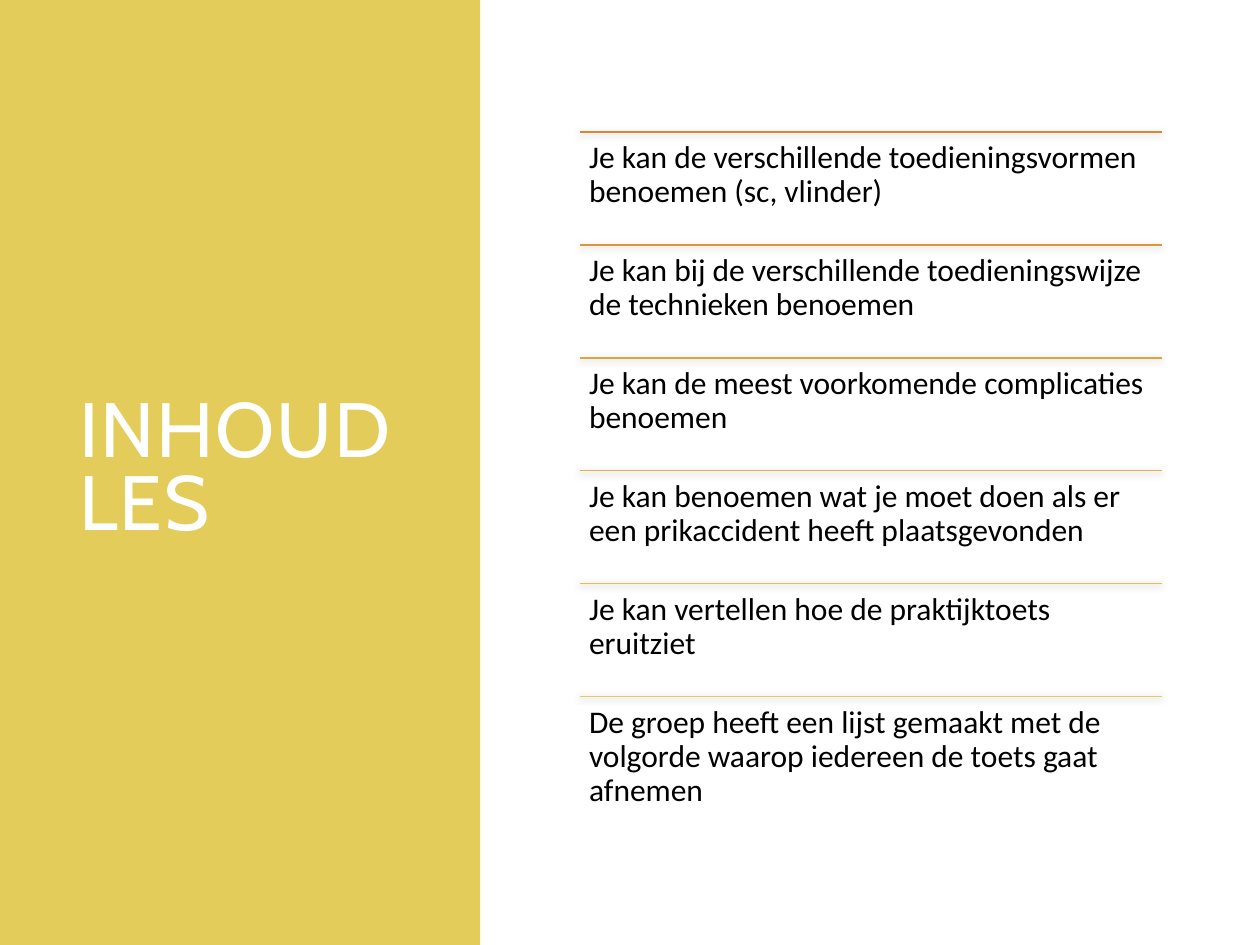
from lxml import etree
from pptx import Presentation
from pptx import util as u
from pptx.dml.color import RGBColor
from pptx.enum import shapes, text
from pptx.oxml import ns

GOALS = [
    ("DB8631", "Je kan de verschillende toedieningsvormen benoemen (sc, vlinder)"),
    ("DD9639", "Je kan bij de verschillende toedieningswijze de technieken benoemen"),
    ("DEA541", "Je kan de meest voorkomende complicaties benoemen"),
    ("E0B34A", "Je kan benoemen wat je moet doen als er een prikaccident heeft plaatsgevonden"),
    ("E1C052", "Je kan vertellen hoe de praktijktoets eruitziet"),
    ("E3CC5A", "De groep heeft een lijst gemaakt met de volgorde waarop iedereen de toets gaat afnemen"),
]
LEFT, TOP, WIDTH, ROW_HEIGHT = 331.2, 75.5, 333, 64.5
INSET = 5.4


def color(value):
    return RGBColor.from_string(value)


def add_run(paragraph, content, size, font_name, font_color):
    run = paragraph.add_run()
    run.text = content
    run.font.size = u.Pt(size)
    run.font.name = font_name
    run.font.color.rgb = color(font_color)
    return run


def add_panel(slide):
    panel = slide.shapes.add_shape(
        shapes.MSO_SHAPE.RECTANGLE, 0, 0, u.Pt(274.4), u.Pt(540))
    panel.shadow.inherit = False
    panel.fill.solid()
    panel.fill.fore_color.rgb = color("E3CC5A")
    panel.line.fill.background()
    slide.shapes.title._element.addprevious(panel._element)


def format_title(slide, content):
    title = slide.shapes.title
    title.left, title.top = u.Pt(38.2), u.Pt(50.4)
    title.width, title.height = u.Pt(201.6), u.Pt(438.5)
    frame = title.text_frame
    frame.word_wrap = True
    frame.auto_size = text.MSO_AUTO_SIZE.NONE
    frame.vertical_anchor = text.MSO_ANCHOR.MIDDLE
    paragraph = frame.paragraphs[0]
    paragraph.alignment = text.PP_ALIGN.LEFT
    paragraph.line_spacing = 0.8
    run = add_run(paragraph, content, 44, "Cabin", "FFFFFF")
    run.font._element.set("spc", "100")


def add_shadow(connector):
    effects = etree.SubElement(connector._element.spPr, ns.qn("a:effectLst"))
    shadow = etree.SubElement(
        effects, ns.qn("a:outerShdw"), blurRad=str(u.Pt(4)),
        dist=str(u.Pt(1)), dir="5400000", rotWithShape="0")
    shade = etree.SubElement(shadow, ns.qn("a:srgbClr"), val="000000")
    etree.SubElement(shade, ns.qn("a:alpha"), val="50000")


def add_rule(slide, top, line_color):
    rule = slide.shapes.add_connector(
        shapes.MSO_CONNECTOR.STRAIGHT,
        u.Pt(LEFT), u.Pt(top), u.Pt(LEFT + WIDTH), u.Pt(top))
    rule.line.color.rgb = color(line_color)
    rule.line.width = u.Pt(0.75)
    add_shadow(rule)


def add_goal(slide, top, content):
    box = slide.shapes.add_textbox(
        u.Pt(LEFT), u.Pt(top), u.Pt(WIDTH), u.Pt(ROW_HEIGHT))
    frame = box.text_frame
    frame.word_wrap = True
    frame.margin_left = frame.margin_right = u.Pt(INSET)
    frame.margin_top = frame.margin_bottom = u.Pt(INSET)
    paragraph = frame.paragraphs[0]
    paragraph.line_spacing = 0.9
    add_run(paragraph, content, 18, "Calibri", "000000")


def main():
    presentation = Presentation()
    presentation.slide_width = u.Pt(720)
    presentation.slide_height = u.Pt(540)
    slide = presentation.slides.add_slide(presentation.slide_layouts[5])
    add_panel(slide)
    format_title(slide, "INHOUD LES")
    for index, (line_color, content) in enumerate(GOALS):
        top = TOP + index * ROW_HEIGHT
        add_rule(slide, top, line_color)
        add_goal(slide, top, content)
    presentation.save("out.pptx")


if __name__ == "__main__":
    main()
